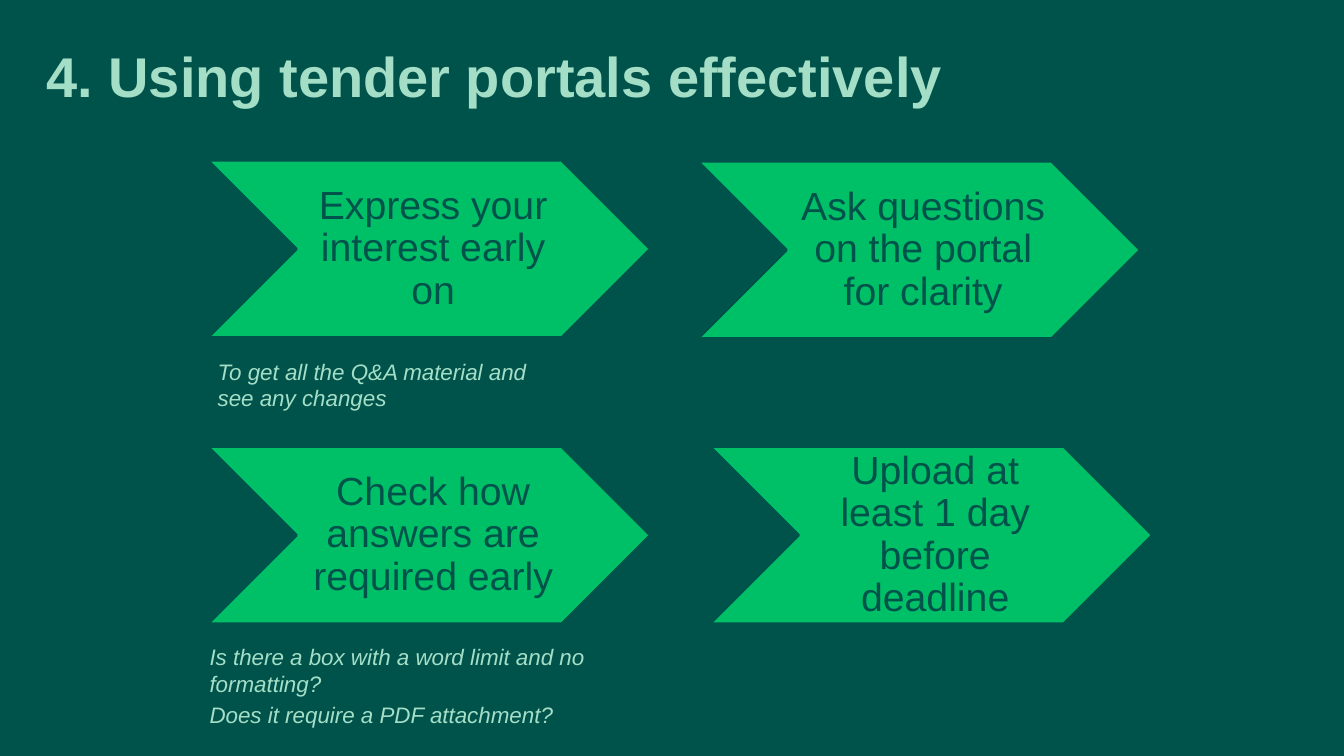
"""Build a slide of four chevrons with advice on using tender portals."""
from pptx import Presentation
from pptx import util as u
from pptx.dml import color
from pptx.enum import shapes, text

CHEVRONS = [
    (2.06, 1.59, "Express your interest early on"),
    (6.92, 1.6, "Ask questions on the portal for clarity"),
    (2.06, 4.43, "Check how answers are required early"),
    (7.04, 4.43, "Upload at least 1 day before deadline"),
]
NOTES = [
    (2.06, 3.5, 3.61, 0.94, ["To get all the Q&A material and see any changes"]),
    (1.98, 6.33, 4.41, 0.95, ["Is there a box with a word limit and no formatting?",
                              "Does it require a PDF attachment?"]),
]


def rgb(value):
    return color.RGBColor.from_string(value)


class PortalSlide:
    dark, green, mint = "00534B", "00C067", "A4DEC7"
    font = "Arial"

    def __init__(self, deck):
        self.page = deck.slides.add_slide(deck.slide_layouts[5])
        background = self.page.background.fill
        background.solid()
        background.fore_color.rgb = rgb(self.dark)

    def add_span(self, para, words, size, ink, bold=False, italic=False):
        span = para.add_run()
        span.text = words
        span.font.name = self.font
        span.font.size = u.Pt(size)
        span.font.bold = bold
        span.font.italic = italic
        span.font.color.rgb = rgb(ink)

    def title(self, words):
        box = self.page.shapes.title
        box.left, box.top = u.Inches(0.36), u.Inches(-0.12)
        box.width, box.height = u.Inches(12.05), u.Inches(1.25)
        frame = box.text_frame
        frame.auto_size = text.MSO_AUTO_SIZE.NONE
        frame.vertical_anchor = text.MSO_ANCHOR.BOTTOM
        para = frame.paragraphs[0]
        para.alignment = text.PP_ALIGN.LEFT
        self.add_span(para, words, 40, self.mint, bold=True)

    def chevron(self, left, top, words):
        box = self.page.shapes.add_shape(
            shapes.MSO_SHAPE.CHEVRON, u.Inches(left), u.Inches(top),
            u.Inches(4.39), u.Inches(1.76))
        box.shadow.inherit = False
        box.fill.solid()
        box.fill.fore_color.rgb = rgb(self.green)
        box.line.color.rgb = rgb(self.dark)
        box.line.width = u.Pt(2)
        frame = box.text_frame
        frame.word_wrap = True
        frame.vertical_anchor = text.MSO_ANCHOR.MIDDLE
        frame.margin_left = u.Inches(0.12)
        frame.margin_top = frame.margin_right = frame.margin_bottom = u.Inches(0.04)
        para = frame.paragraphs[0]
        para.alignment = text.PP_ALIGN.CENTER
        para.line_spacing = 0.9
        self.add_span(para, words, 28, self.dark)

    def note(self, left, top, width, height, lines):
        box = self.page.shapes.add_textbox(
            u.Inches(left), u.Inches(top), u.Inches(width), u.Inches(height))
        frame = box.text_frame
        frame.word_wrap = True
        for index, words in enumerate(lines):
            para = frame.add_paragraph() if index else frame.paragraphs[0]
            if index:
                para.space_before = u.Pt(3.2)
            self.add_span(para, words, 16, self.mint, italic=True)


def main():
    deck = Presentation()
    deck.slide_width, deck.slide_height = u.Inches(13.33), u.Inches(7.5)
    slide = PortalSlide(deck)
    slide.title("4. Using tender portals effectively")
    for chevron in CHEVRONS:
        slide.chevron(*chevron)
    for note in NOTES:
        slide.note(*note)
    deck.save("out.pptx")


if __name__ == "__main__":
    main()
